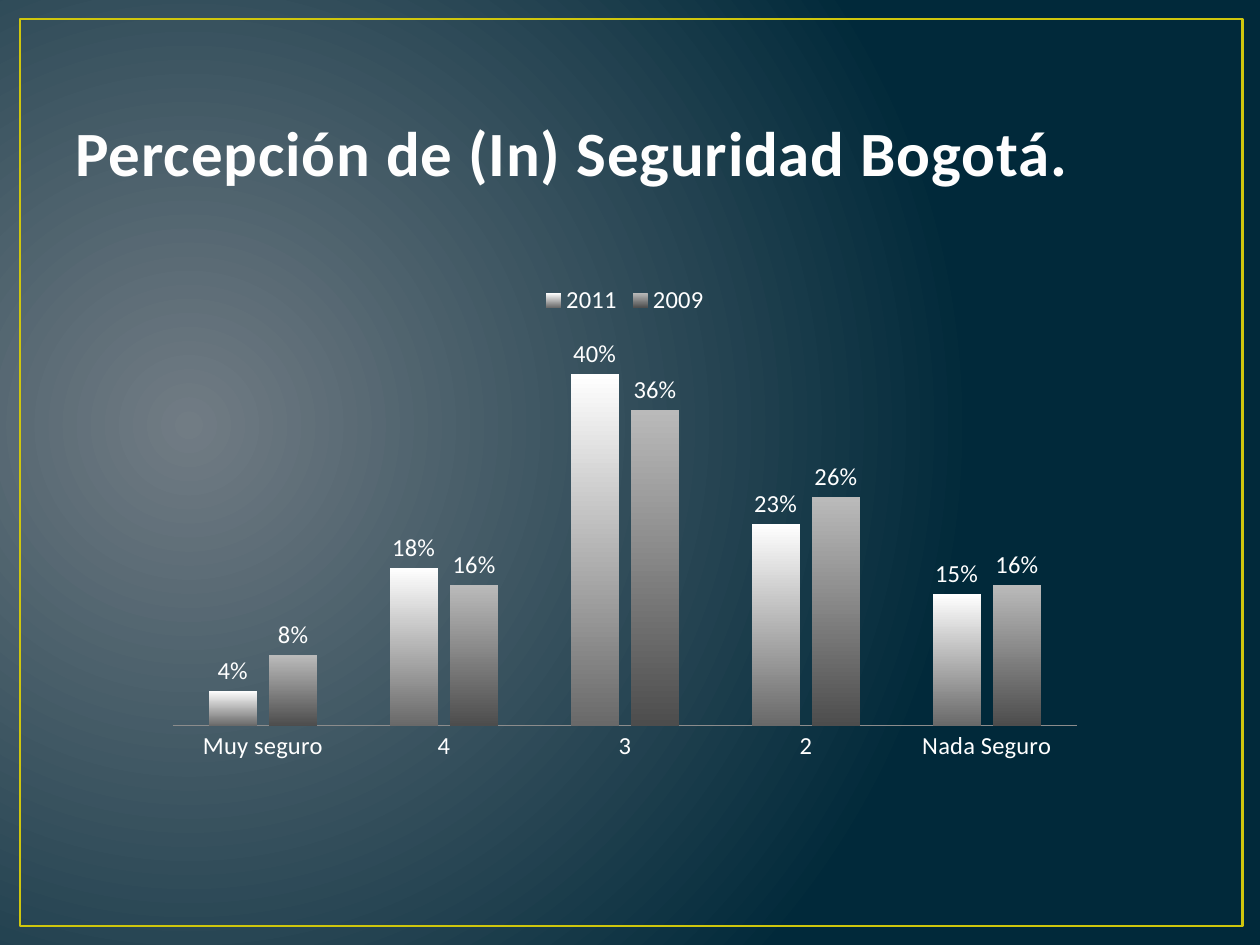
from pptx import Presentation
from pptx.chart.data import CategoryChartData
from pptx.dml.color import RGBColor
from pptx.enum.chart import XL_CHART_TYPE as Kind, XL_LABEL_POSITION as Spot
from pptx.enum.chart import XL_LEGEND_POSITION as Side, XL_TICK_LABEL_POSITION as Tags
from pptx.enum.chart import XL_TICK_MARK as Tick
from pptx.enum.shapes import MSO_SHAPE as Geo
from pptx.enum.text import MSO_ANCHOR as Anchor, MSO_AUTO_SIZE as Fit, PP_ALIGN as Align
from pptx.oxml import parse_xml
from pptx.oxml.ns import nsdecls, qn
from pptx.util import Inches, Pt

WHITE = RGBColor(0xFF, 0xFF, 0xFF)
CREAM = RGBColor(0xFE, 0xFE, 0xFE)
GOLD = RGBColor(0xCF, 0xC6, 0x0D)
SLATE = RGBColor(0x38, 0x4F, 0x55)
GLOW = RGBColor(0x71, 0x7C, 0x84)
NAVY = RGBColor(0x01, 0x29, 0x3A)
AXIS = RGBColor(0x8C, 0x8C, 0x8C)
SILVER = RGBColor(0x69, 0x69, 0x69)
ASH = RGBColor(0xBA, 0xBA, 0xBA)
COAL = RGBColor(0x4D, 0x4D, 0x4D)

GROUPS = ["Muy seguro", "4", "3", "2", "Nada Seguro"]
YEARS = {
    "2011": ((0.04, 0.18, 0.40, 0.23, 0.15), (WHITE, SILVER)),
    "2009": ((0.08, 0.16, 0.36, 0.26, 0.16), (ASH, COAL)),
}


def put(item, **vals):
    """Set each named attribute of the item."""
    for key, val in vals.items():
        setattr(item, key, val)


class Deck:
    """Holds the style and the current slide; boxes are shares of its size."""

    face = "Calibri"

    def __init__(self, wide, high):
        self.show = Presentation()
        put(self.show, slide_width=Inches(wide), slide_height=Inches(high))
        self.slide = self.show.slides.add_slide(self.show.slide_layouts[5])

    def box(self, x, y, w, h):
        wide, high = self.show.slide_width, self.show.slide_height
        return [round(n) for n in (x * wide, y * high, w * wide, h * high)]

    def font(self, font, size, color, **more):
        put(font, name=self.face, size=Pt(size), **more)
        font.color.rgb = color

    def back(self, inner, outer):
        """Fill the background with a circular gradient."""
        bg = parse_xml(
            f'<p:bg {nsdecls("p", "a")}><p:bgPr><a:gradFill rotWithShape="1"><a:gsLst>'
            f'<a:gs pos="0"><a:srgbClr val="{inner}"/></a:gs>'
            f'<a:gs pos="100000"><a:srgbClr val="{outer}"/></a:gs></a:gsLst>'
            '<a:path path="circle"><a:fillToRect l="15000" t="50000" r="85000" b="60000"/>'
            '</a:path></a:gradFill><a:effectLst/></p:bgPr></p:bg>')
        self.slide.element.find(qn("p:cSld")).insert(0, bg)

    def frame(self, area, color, width):
        rect = self.slide.shapes.add_shape(Geo.RECTANGLE, *self.box(*area))
        rect.shadow.inherit = False
        rect.fill.background()
        rect.line.color.rgb = color
        rect.line.width = Pt(width)
        self.slide.shapes.element.insert(2, rect.element)

    def title(self, area, text, size, color, edge):
        head = self.slide.shapes.title
        x, y, w, h = self.box(*area)
        put(head, left=x, top=y, width=w, height=h)
        put(head.text_frame, text=text, word_wrap=True, auto_size=Fit.NONE,
            vertical_anchor=Anchor.BOTTOM)
        para = head.text_frame.paragraphs[0]
        para.alignment = Align.LEFT
        font = para.runs[0].font
        self.font(font, size, color, bold=True)
        props = para.runs[0]._r.get_or_add_rPr()
        props.set("spc", "50")
        props.insert(0, parse_xml(
            f'<a:ln {nsdecls("a")} w="{Pt(1.05)}"><a:solidFill>'
            f'<a:srgbClr val="{edge}"/></a:solidFill></a:ln>'))

    def bars(self, area, groups, rows, size, color):
        data = CategoryChartData(number_format="0%")
        data.categories = groups
        for name, (vals, _) in rows.items():
            data.add_series(name, vals)
        chart = self.slide.shapes.add_chart(
            Kind.COLUMN_CLUSTERED, *self.box(*area), data).chart
        put(chart, has_title=False, has_legend=True)
        self.font(chart.font, 10, color)
        put(chart.legend, position=Side.TOP, include_in_layout=False)
        self.font(chart.legend.font, size, color)

        put(chart.value_axis, visible=False, has_major_gridlines=False, minimum_scale=0)
        base = chart.category_axis
        put(base, major_tick_mark=Tick.NONE, minor_tick_mark=Tick.NONE,
            tick_label_position=Tags.NEXT_TO_AXIS)
        base.format.line.color.rgb = AXIS
        self.font(base.tick_labels.font, size, color)

        plot = chart.plots[0]
        put(plot, gap_width=150, overlap=-25, vary_by_categories=False)
        for row, (_, tones) in zip(plot.series, rows.values()):
            fill = row.format.fill
            fill.gradient()
            fill.gradient_angle = 270
            for stop, tone, spot in zip(fill.gradient_stops, tones, (0, 1)):
                stop.color.rgb = tone
                stop.position = spot
            put(row.data_labels, show_value=True, number_format="0%",
                number_format_is_linked=False, position=Spot.OUTSIDE_END)
            self.font(row.data_labels.font, size, color)


def main():
    deck = Deck(10, 7.5)
    deck.back(GLOW, NAVY)
    deck.frame((0.016, 0.02, 0.97, 0.96), GOLD, 1.5)
    deck.title((0.05, 0.04, 0.9, 0.167), "Percepción de (In) Seguridad Bogotá.",
               36, CREAM, SLATE)
    deck.bars((0.122, 0.287, 0.748, 0.529), GROUPS, YEARS, 14, WHITE)
    deck.show.save("out.pptx")


if __name__ == "__main__":
    main()
